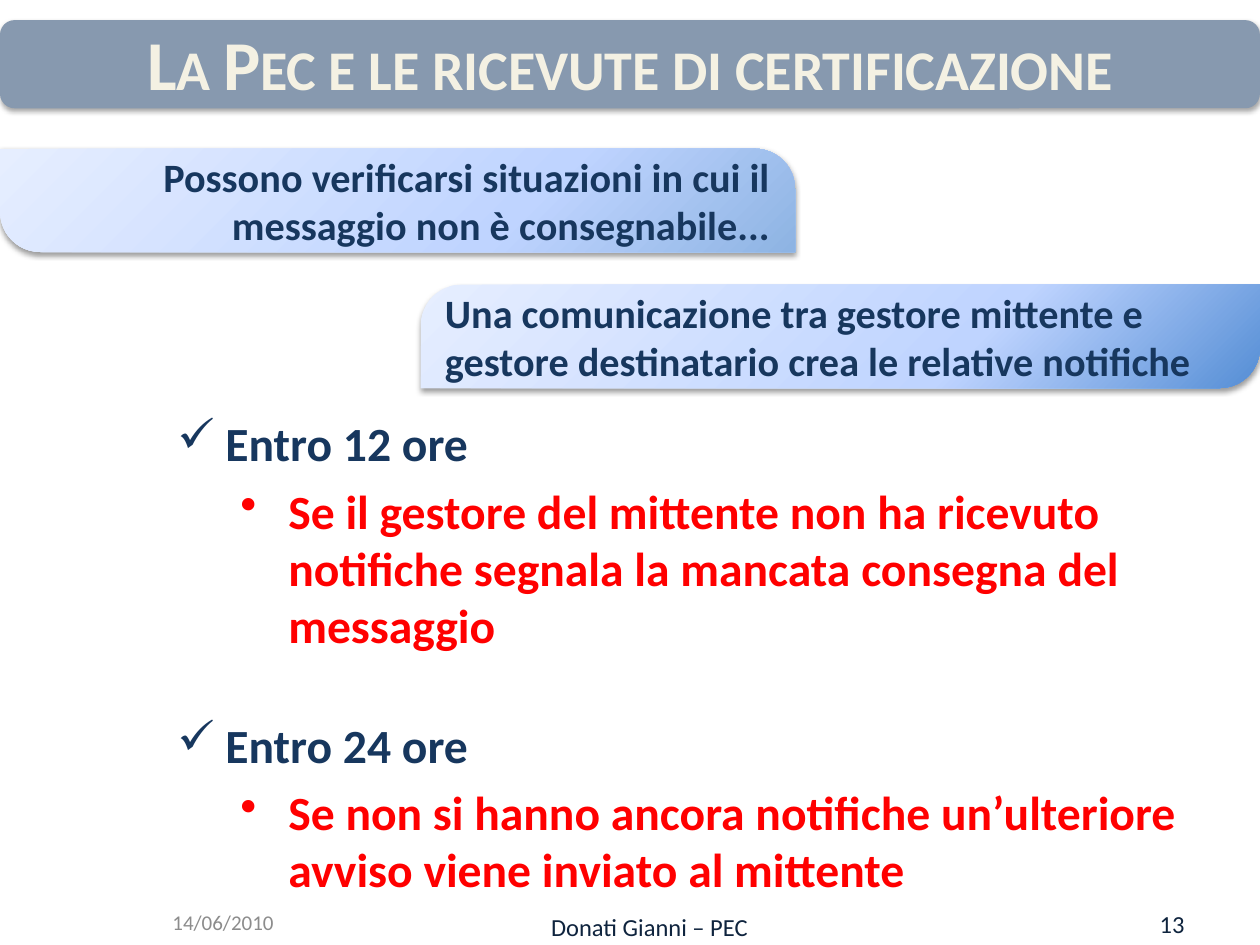
from lxml import etree
from pptx import Presentation
from pptx import util as u
from pptx.dml.color import RGBColor
from pptx.enum import shapes, text
from pptx.oxml import parse_xml
from pptx.oxml.ns import nsdecls, qn

NAVY = RGBColor(0x17, 0x37, 0x5E)
DARK = RGBColor(0x0F, 0x24, 0x3E)
RED = RGBColor(0xFF, 0x00, 0x00)
CREAM = RGBColor(0xF4, 0xF1, 0xE3)
GREY = RGBColor(0x8C, 0x8C, 0x8C)
SLATE = RGBColor(0x87, 0x99, 0xAF)
SKY = RGBColor(0x8E, 0xB4, 0xE3)
BLUE = RGBColor(0x55, 0x8E, 0xD5)
PALE = RGBColor(0xBF, 0xD4, 0xFF)
ICE = RGBColor(0xE6, 0xEE, 0xFF)

LEFT, CENTER, RIGHT = text.PP_ALIGN.LEFT, text.PP_ALIGN.CENTER, text.PP_ALIGN.RIGHT
TOP, MIDDLE = text.MSO_ANCHOR.TOP, text.MSO_ANCHOR.MIDDLE


def apply(target, values):
    for name, value in values.items():
        setattr(target, name, value)


class SlideBuilder:
    font = "Calibri"

    def __init__(self, slide):
        self.slide = slide

    def paragraph(self, paragraph, wording, size, color, bold=False, **layout):
        apply(paragraph, layout)
        run = paragraph.add_run()
        run.text = wording
        apply(run.font, {"name": self.font, "size": u.Pt(size), "bold": bold})
        run.font.color.rgb = color
        return run

    def frame(self, shape, anchor):
        apply(shape.text_frame, {"word_wrap": True, "vertical_anchor": anchor})
        return shape.text_frame

    def label(self, box, wording, size, color, alignment, anchor=MIDDLE, bold=False):
        shape = self.slide.shapes.add_textbox(*map(u.Inches, box))
        first = self.frame(shape, anchor).paragraphs[0]
        return self.paragraph(first, wording, size, color, bold, alignment=alignment)

    def shadow(self, shape, opacity, distance):
        shape.shadow.inherit = False
        effects = shape._element.spPr.find(qn("a:effectLst"))
        effects.append(parse_xml(
            f'<a:outerShdw {nsdecls("a")} blurRad="{u.Pt(3.1)}" dist="{u.Pt(distance)}" '
            f'dir="5400000" rotWithShape="0"><a:srgbClr val="000000">'
            f'<a:alpha val="{opacity * 1000}"/></a:srgbClr></a:outerShdw>'))

    def panel(self, kind, box, adjustments=()):
        shape = self.slide.shapes.add_shape(kind, *map(u.Inches, box))
        for index, value in enumerate(adjustments):
            shape.adjustments[index] = value
        shape.line.fill.background()
        return shape

    def banner(self, box):
        shape = self.panel(shapes.MSO_SHAPE.ROUNDED_RECTANGLE, box)
        shape.fill.solid()
        shape.fill.fore_color.rgb = SLATE
        self.shadow(shape, 35, 1.8)

    def callout(self, box, adjustments, corner_color, wording, alignment):
        shape = self.panel(shapes.MSO_SHAPE.ROUND_2_DIAG_RECTANGLE, box, adjustments)
        stops = "".join(
            f'<a:gs pos="{position * 1000}"><a:srgbClr val="{color}"/></a:gs>'
            for position, color in ((0, corner_color), (35, PALE), (100, ICE)))
        gradient = parse_xml(
            f'<a:gradFill {nsdecls("a")} rotWithShape="1"><a:gsLst>{stops}</a:gsLst>'
            '<a:path path="circle"><a:fillToRect l="100000" t="100000"/></a:path></a:gradFill>')
        shape._element.spPr.find(qn("a:prstGeom")).addnext(gradient)
        self.shadow(shape, 38, 1.6)
        first = self.frame(shape, MIDDLE).paragraphs[0]
        self.paragraph(first, wording, 23, NAVY, True, alignment=alignment)

    def bullets(self, box, items):
        shape = self.slide.shapes.add_textbox(*map(u.Inches, box))
        frame = self.frame(shape, TOP)
        for index, (level, wording, before) in enumerate(items):
            paragraph = frame.paragraphs[0] if index == 0 else frame.add_paragraph()
            symbol, color, margin, spacing = (
                ("✓", NAVY, 0.38, 0.9), ("•", RED, 0.88, 1.0))[level]
            properties = paragraph._p.get_or_add_pPr()
            properties.set("marL", str(u.Inches(margin)))
            properties.set("indent", str(u.Inches(-0.38)))
            etree.SubElement(properties, qn("a:buChar")).set("char", symbol)
            self.paragraph(paragraph, wording, 27.2, color, True, level=level,
                           line_spacing=spacing, space_before=u.Pt(before))


def main():
    presentation = Presentation()
    apply(presentation, {"slide_width": u.Inches(10), "slide_height": u.Inches(7.5)})
    builder = SlideBuilder(presentation.slides.add_slide(presentation.slide_layouts[6]))

    builder.banner((0, 0.16, 10, 0.7))
    title = builder.label((0, 0.16, 10, 0.68), "La Pec e le ricevute di certificazione",
                          40, CREAM, CENTER, bold=True)
    title.font._element.set("cap", "small")

    builder.label((7.17, 7.17, 2.33, 0.32), "13", 14, DARK, RIGHT)
    builder.label((3.57, 7.19, 3.17, 0.31), "Donati Gianni – PEC", 14, DARK, CENTER, TOP)
    builder.label((1.27, 7.14, 2.33, 0.36), "14/06/2010", 12, GREY, LEFT)

    builder.callout((0, 1.18, 6.31, 0.82), (0, 0.39), SKY,
                    "Possono verificarsi situazioni in cui il messaggio non è consegnabile...",
                    RIGHT)
    builder.bullets((1.31, 3.29, 8.39, 3.82), (
        (0, "Entro 12 ore", 0),
        (1, "Se il gestore del mittente non ha ricevuto notifiche segnala la mancata "
            "consegna del messaggio", 5.4),
        (0, "Entro 24 ore", 39.5),
        (1, "Se non si hanno ancora notifiche un’ulteriore avviso viene inviato al mittente",
         5.4),
    ))
    builder.callout((3.34, 2.26, 6.66, 0.82), (0.39, 0), BLUE,
                    "Una comunicazione tra gestore mittente e gestore destinatario "
                    "crea le relative notifiche", LEFT)

    presentation.save("out.pptx")


if __name__ == "__main__":
    main()
